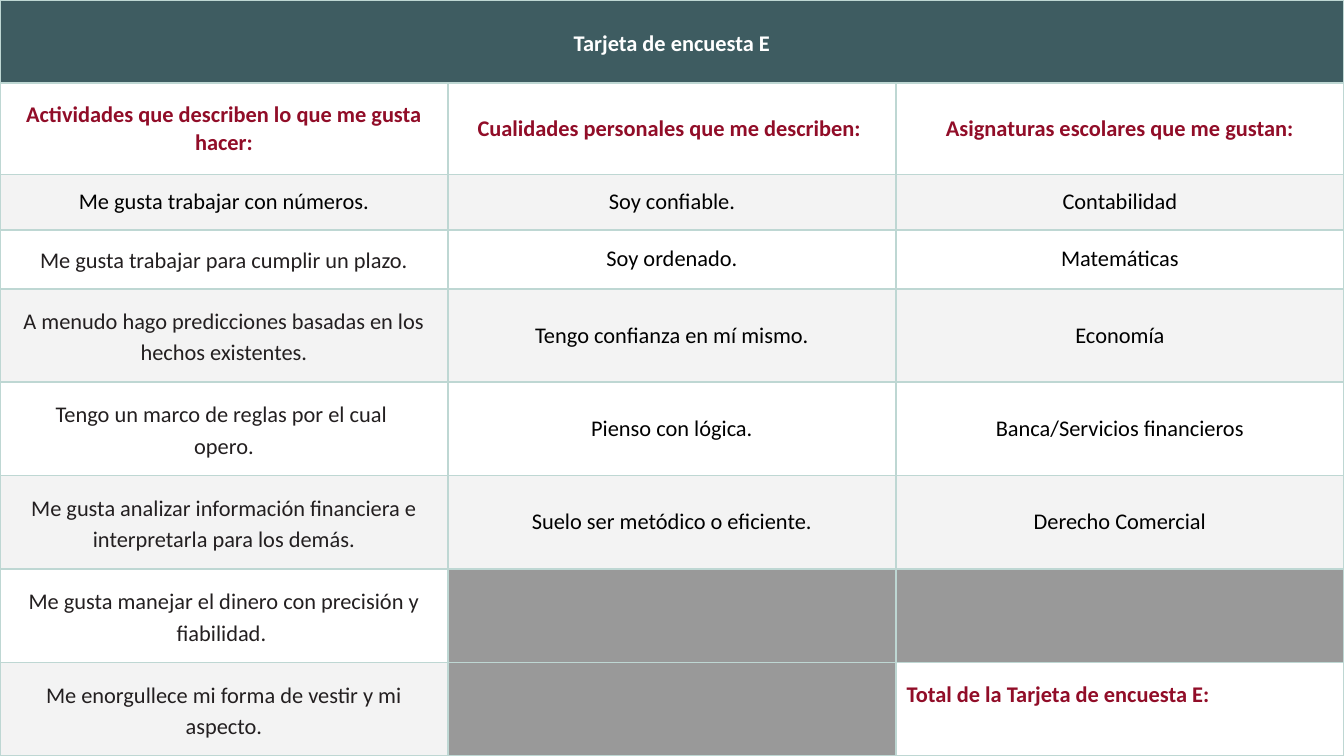
import pptx
import pptx.util
from lxml import etree
from pptx.dml.color import RGBColor
from pptx.enum.text import MSO_ANCHOR, PP_ALIGN
from pptx.oxml.ns import qn

TEAL = RGBColor(0x3E, 0x5C, 0x61)
MINT = RGBColor(0xBE, 0xD7, 0xD3)
CRIMSON = RGBColor(0x91, 0x0D, 0x28)
INK = RGBColor(0x23, 0x1F, 0x20)
BLACK = RGBColor(0, 0, 0)
WHITE = RGBColor(0xFF, 0xFF, 0xFF)
PALE = RGBColor(0xF3, 0xF3, 0xF3)
GREY = RGBColor(0x99, 0x99, 0x99)

TITLE = "Tarjeta de encuesta E"
HEADINGS = [
    "Actividades que describen lo que me gusta hacer:",
    "Cualidades personales que me describen: ",
    "Asignaturas escolares que me gustan:",
]
ANSWERS = [
    ("Me gusta trabajar con números.", "Soy confiable.", "Contabilidad"),
    ("Me gusta trabajar para cumplir un plazo.", "Soy ordenado.", "Matemáticas"),
    ("A menudo hago predicciones basadas en los hechos existentes.",
     "Tengo confianza en mí mismo.", "Economía"),
    ("Tengo un marco de reglas por el cual \nopero.",
     "Pienso con lógica.", "Banca/Servicios financieros"),
    ("Me gusta analizar información financiera e interpretarla para los demás.",
     "Suelo ser metódico o eficiente.", "Derecho Comercial"),
    ("Me gusta manejar el dinero con precisión y fiabilidad. ", "", ""),
    ("Me enorgullece mi forma de vestir y mi aspecto.", "", ""),
]
TOTAL = "Total de la Tarjeta de encuesta E:"
TOP_ROW_HEIGHTS = [0.62, 0.68, 0.41, 0.44]
ROW_COUNT = len(ANSWERS) + 2
COLUMN_COUNT = len(HEADINGS)
WIDTH = pptx.util.Inches(10)
HEIGHT = WIDTH * 9 // 16


def add_borders(cell):
    properties = cell._tc.get_or_add_tcPr()
    for side in ("a:lnL", "a:lnR", "a:lnT", "a:lnB"):
        line = etree.SubElement(properties, qn(side), w=str(pptx.util.Pt(1)))
        fill = etree.SubElement(line, qn("a:solidFill"))
        etree.SubElement(fill, qn("a:srgbClr"), val=str(MINT))


def fill_cell(cell, text, background, color, bold=False, align=PP_ALIGN.CENTER,
              line_spacing=None, before=0, after=0):
    cell.fill.solid()
    cell.fill.fore_color.rgb = background
    cell.vertical_anchor = MSO_ANCHOR.MIDDLE
    cell.margin_left = cell.margin_right = pptx.util.Inches(0.08)
    cell.margin_top = cell.margin_bottom = pptx.util.Inches(0.08)
    if not text:
        return
    cell.text = text
    for paragraph in cell.text_frame.paragraphs:
        paragraph.alignment = align
        paragraph.line_spacing = line_spacing
        paragraph.space_before = pptx.util.Pt(before)
        paragraph.space_after = pptx.util.Pt(after)
        paragraph.font.name = "Calibri"
        paragraph.font.size = pptx.util.Pt(12)
        paragraph.font.bold = bold
        paragraph.font.color.rgb = color


presentation = pptx.Presentation()
presentation.slide_width = WIDTH
presentation.slide_height = HEIGHT
slide = presentation.slides.add_slide(presentation.slide_layouts[6])

survey = slide.shapes.add_table(ROW_COUNT, COLUMN_COUNT, 0, 0, WIDTH, HEIGHT).table
row_heights = [pptx.util.Inches(height) for height in TOP_ROW_HEIGHTS]
tall_count = ROW_COUNT - len(row_heights)
row_heights += [(HEIGHT - sum(row_heights)) // tall_count] * tall_count
for row, height in zip(survey.rows, row_heights):
    row.height = height
for cell in survey.iter_cells():
    add_borders(cell)

title = survey.cell(0, 0)
title.merge(survey.cell(0, COLUMN_COUNT - 1))
fill_cell(title, TITLE, TEAL, WHITE, bold=True, line_spacing=1.15, after=6)

for column, heading in enumerate(HEADINGS):
    fill_cell(survey.cell(1, column), heading, WHITE, CRIMSON, bold=True, before=10)

for index, answers in enumerate(ANSWERS):
    band = WHITE if index % 2 else PALE
    for column, answer in enumerate(answers):
        spaced = column == 0 and index > 0
        fill_cell(survey.cell(index + 2, column), answer,
                  band if answer else GREY,
                  INK if spaced else BLACK,
                  line_spacing=1.15 if spaced else None)

total = survey.cell(ROW_COUNT - 1, COLUMN_COUNT - 1)
fill_cell(total, TOTAL, WHITE, CRIMSON, bold=True, align=PP_ALIGN.LEFT, before=10)
total.margin_bottom = pptx.util.Inches(0.29)

presentation.save("out.pptx")
